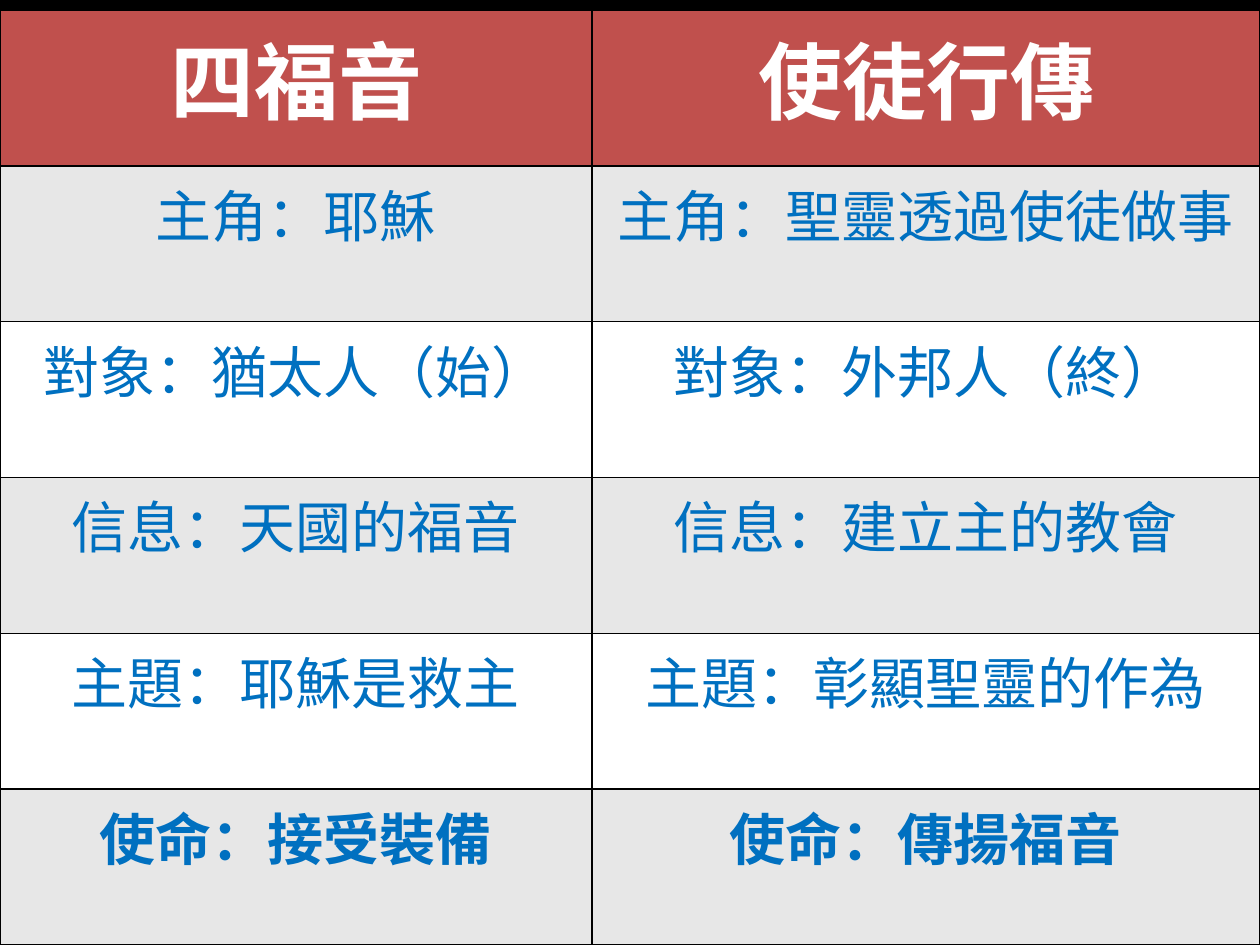
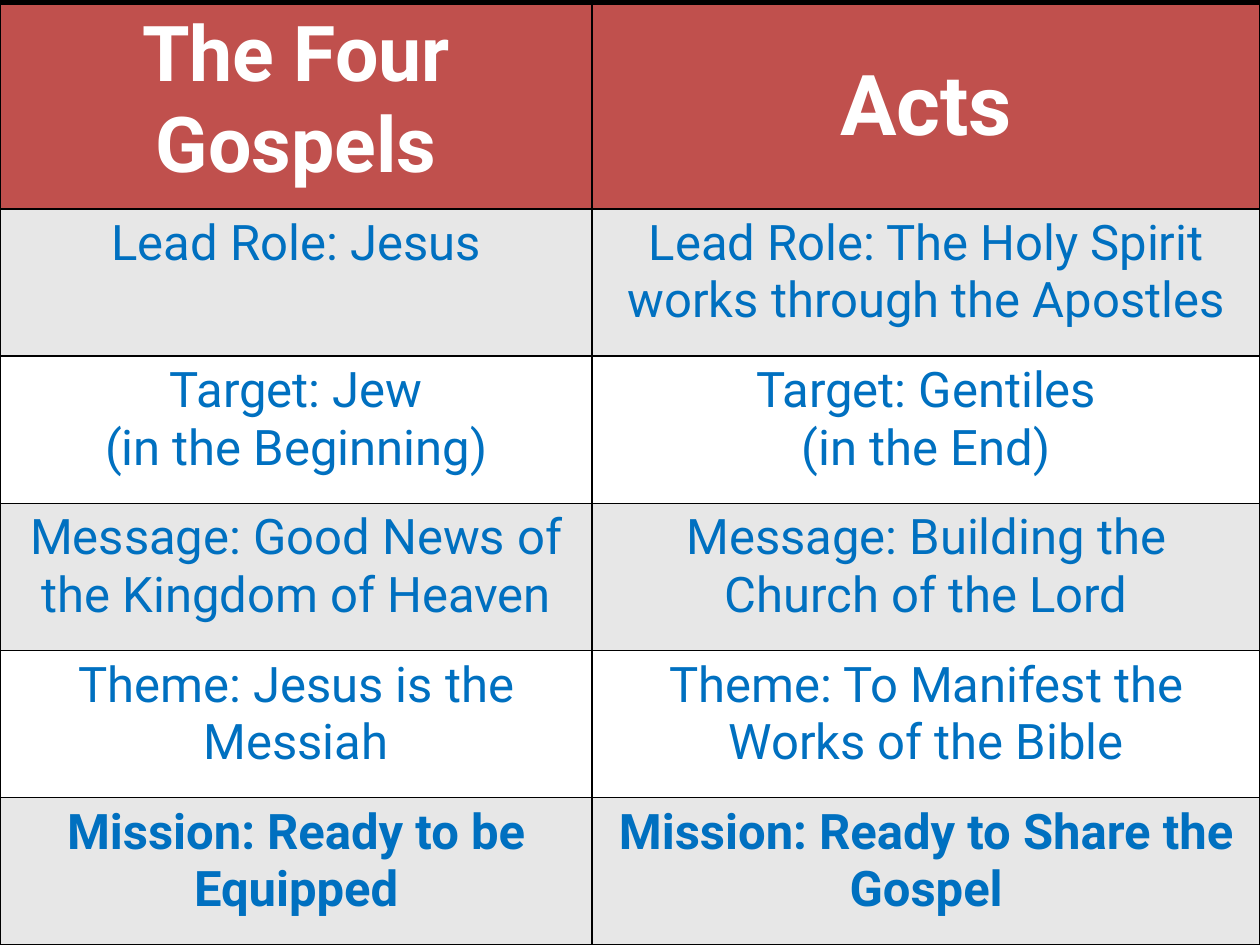
from dataclasses import dataclass

from lxml.etree import SubElement
from pptx import Presentation
from pptx.dml.color import RGBColor
from pptx.enum.text import MSO_ANCHOR, PP_ALIGN
from pptx.oxml.ns import qn
from pptx.presentation import Presentation as Deck
from pptx.table import _Cell as Cell
from pptx.util import Pt

SLIDE_WIDTH, SLIDE_HEIGHT = Pt(720), Pt(540)
COLUMN_WIDTHS = (Pt(338.4), Pt(381.6))
BLANK_LAYOUT = 6
FONT = "Roboto"
BORDER_WIDTH = Pt(1)

BLACK = RGBColor(0x00, 0x00, 0x00)
WHITE = RGBColor(0xFF, 0xFF, 0xFF)
RED = RGBColor(0xC0, 0x50, 0x4D)
BLUE = RGBColor(0x00, 0x70, 0xC0)
GREY = RGBColor(0xE7, 0xE7, 0xE7)


@dataclass(frozen=True)
class Heading:
    text: str
    size: int
    anchor: MSO_ANCHOR = MSO_ANCHOR.TOP


@dataclass(frozen=True)
class Comparison:
    top: Pt
    heading_height: Pt
    body_size: int
    headings: tuple[Heading, Heading]
    rows: tuple[tuple[str, str], ...]


COMPARISONS = (
    Comparison(
        top=Pt(5.76),
        heading_height=Pt(89.04),
        body_size=32,
        headings=(Heading("四福音", 48), Heading("使徒行傳", 48)),
        rows=(
            ("主角：耶穌", "主角：聖靈透過使徒做事"),
            ("對象：猶太人（始）", "對象：外邦人（終）"),
            ("信息：天國的福音", "信息：建立主的教會"),
            ("主題：耶穌是救主", "主題：彰顯聖靈的作為"),
            ("使命：接受裝備", "使命：傳揚福音"),
        ),
    ),
    Comparison(
        top=Pt(2.4),
        heading_height=Pt(117),
        body_size=28,
        headings=(
            Heading("The Four Gospels", 44),
            Heading("Acts", 48, MSO_ANCHOR.MIDDLE),
        ),
        rows=(
            ("Lead Role: Jesus",
             "Lead Role: The Holy Spirit works through the Apostles"),
            ("Target: Jew\n(in the Beginning)",
             "Target: Gentiles\n(in the End)"),
            ("Message: Good News of the Kingdom of Heaven",
             "Message: Building the Church of the Lord"),
            ("Theme: Jesus is the Messiah",
             "Theme: To Manifest the Works of the Bible"),
            ("Mission: Ready to be Equipped",
             "Mission: Ready to Share the Gospel"),
        ),
    ),
)


def add_borders(cell: Cell) -> None:
    properties = cell._tc.get_or_add_tcPr()
    for side in ("a:lnL", "a:lnR", "a:lnT", "a:lnB"):
        line = SubElement(properties, qn(side), w=str(BORDER_WIDTH))
        fill = SubElement(line, qn("a:solidFill"))
        SubElement(fill, qn("a:srgbClr"), val=str(BLACK))


def fill_cell(cell: Cell, text: str, size: int, color: RGBColor,
              background: RGBColor, bold: bool) -> None:
    add_borders(cell)
    cell.fill.solid()
    cell.fill.fore_color.rgb = background
    cell.text = text
    for paragraph in cell.text_frame.paragraphs:
        paragraph.alignment = PP_ALIGN.CENTER
        font = paragraph.font
        font.name = FONT
        font.size = Pt(size)
        font.bold = bold
        font.color.rgb = color


def add_comparison_slide(deck: Deck, comparison: Comparison) -> None:
    slide = deck.slides.add_slide(deck.slide_layouts[BLANK_LAYOUT])
    slide.background.fill.solid()
    slide.background.fill.fore_color.rgb = BLACK

    row_count = len(comparison.rows)
    height = SLIDE_HEIGHT - comparison.top
    table = slide.shapes.add_table(
        row_count + 1, len(COLUMN_WIDTHS), 0, comparison.top, SLIDE_WIDTH, height
    ).table
    table.first_row = table.horz_banding = False
    for column, width in zip(table.columns, COLUMN_WIDTHS):
        column.width = width
    for row in table.rows:
        row.height = (height - comparison.heading_height) // row_count
    table.rows[0].height = comparison.heading_height

    for column_index, heading in enumerate(comparison.headings):
        cell = table.cell(0, column_index)
        fill_cell(cell, heading.text, heading.size, WHITE, RED, bold=True)
        cell.vertical_anchor = heading.anchor

    for row_index, texts in enumerate(comparison.rows, start=1):
        background = GREY if row_index % 2 else WHITE
        is_mission = row_index == row_count
        for column_index, text in enumerate(texts):
            fill_cell(table.cell(row_index, column_index), text,
                      comparison.body_size, BLUE, background, bold=is_mission)


def main() -> None:
    deck = Presentation()
    deck.slide_width, deck.slide_height = SLIDE_WIDTH, SLIDE_HEIGHT
    for comparison in COMPARISONS:
        add_comparison_slide(deck, comparison)
    deck.save("out.pptx")


if __name__ == "__main__":
    main()
